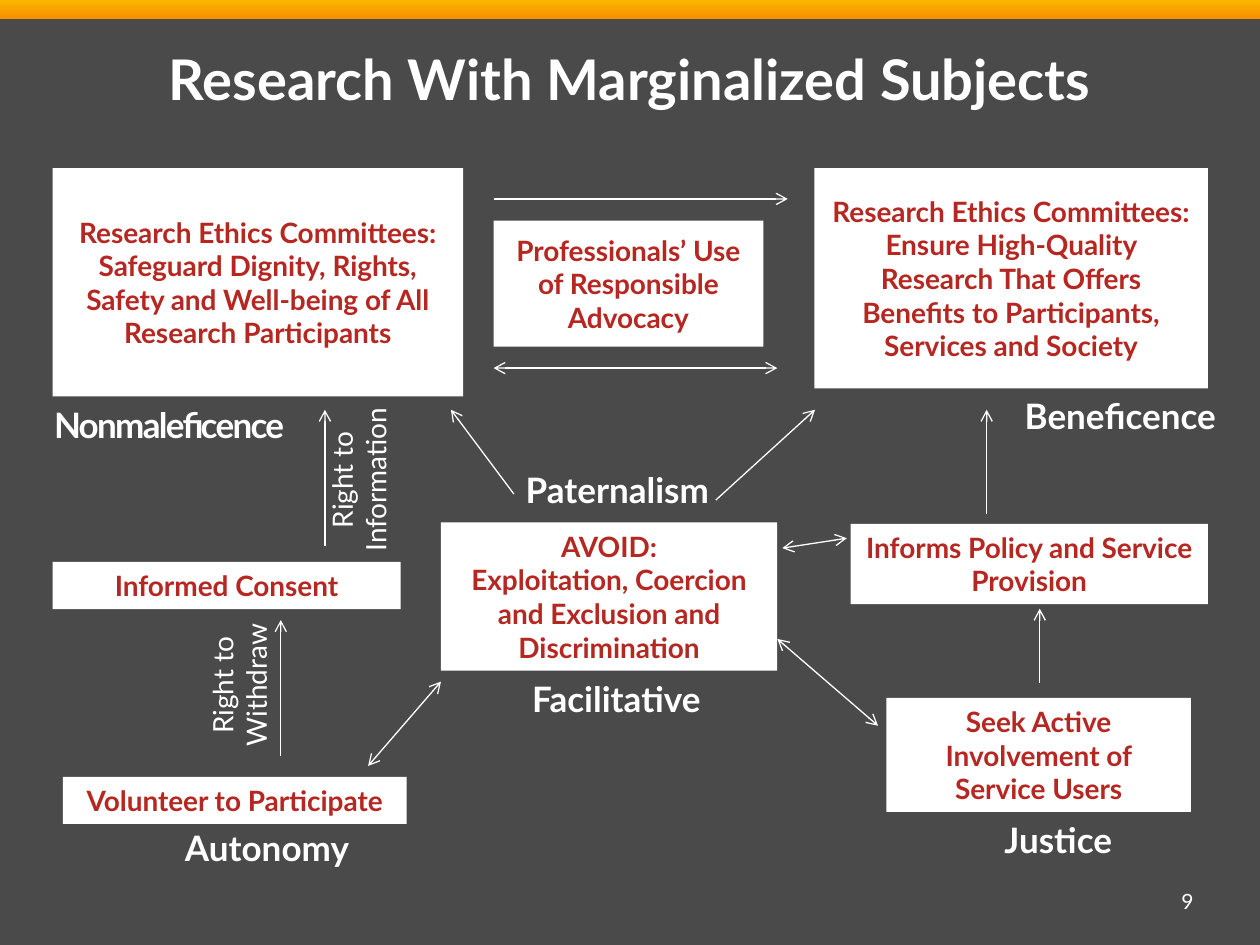
from typing import NamedTuple

from lxml import etree
from pptx import Presentation
from pptx.dml.color import RGBColor
from pptx.enum.shapes import MSO_CONNECTOR, MSO_SHAPE
from pptx.enum.text import MSO_ANCHOR, PP_ALIGN
from pptx.oxml.ns import qn
from pptx.util import Cm, Pt

RECT, STRAIGHT = MSO_SHAPE.RECTANGLE, MSO_CONNECTOR.STRAIGHT
LEFT, CENTER, RIGHT = PP_ALIGN.LEFT, PP_ALIGN.CENTER, PP_ALIGN.RIGHT
TOP, MIDDLE = MSO_ANCHOR.TOP, MSO_ANCHOR.MIDDLE

FONT = "Lato"
WHITE, RED, GREY = "FFFFFF", "B62721", "4A4A4A"
ORANGE, YELLOW = "F78F00", "FAB700"
TITLE_ONLY = 5
LABEL_HEIGHT = 1.11


class Box(NamedTuple):
    text: str
    x: float
    y: float
    w: float
    h: float


class Label(NamedTuple):
    text: str
    x: float
    y: float
    w: float
    align: PP_ALIGN = CENTER
    spacing: float = 0


class Arrow(NamedTuple):
    x1: float
    y1: float
    x2: float
    y2: float
    both: bool = False


BOXES = [
    Box("Research Ethics Committees: Safeguard Dignity, Rights, Safety and "
        "Well-being of All Research Participants", 1.06, 3.39, 8.28, 4.6),
    Box("Professionals’ Use of Responsible Advocacy", 9.95, 4.45, 5.44, 2.54),
    Box("Research Ethics Committees: Ensure High-Quality Research That Offers "
        "Benefits to Participants, Services and Society", 16.42, 3.39, 7.93, 4.44),
    Box("AVOID:\nExploitation, Coercion and Exclusion and Discrimination",
        8.89, 10.53, 6.78, 2.99),
    Box("Informs Policy and Service Provision", 17.15, 10.56, 7.2, 1.62),
    Box("Seek Active Involvement of Service Users", 17.87, 14.07, 6.14, 2.3),
    Box("Volunteer to Participate", 1.27, 15.66, 6.93, 0.95),
    Box("Informed Consent", 1.06, 11.33, 7.02, 0.95),
]
LABELS = [
    Label("Paternalism", 9.98, 9.32, 4.93),
    Label("Facilitative", 10.24, 13.54, 4.37),
    Label("Autonomy", 3.48, 16.54, 4.47, LEFT),
    Label("Justice", 19.33, 16.38, 4.01),
    Label("Nonmaleficence", 0.84, 8, 5.51, LEFT, -1),
    Label("Beneficence", 20.12, 7.82, 4.93),
]
RIGHTS = [
    Box("Right to Withdraw", 2.97, 13, 3.71, 1.62),
    Box("Right to Information", 5.38, 8.86, 3.71, 1.62),
]
ARROWS = [
    Arrow(9.95, 7.42, 15.67, 7.42, both=True),
    Arrow(15.77, 11.05, 17.07, 10.85, both=True),
    Arrow(15.67, 12.88, 17.7, 14.63, both=True),
    Arrow(7.42, 15.44, 8.89, 13.74, both=True),
    Arrow(14.43, 10.08, 16.43, 8.26),
    Arrow(9.95, 4.01, 15.88, 4.01),
    Arrow(5.66, 15.24, 5.66, 12.5),
    Arrow(10.36, 9.96, 9.09, 8.26),
    Arrow(19.89, 10.36, 19.89, 8.26),
    Arrow(20.96, 13.77, 20.96, 12.27),
    Arrow(6.55, 11, 6.55, 8.26),
]


def rgb(color: str) -> RGBColor:
    return RGBColor.from_string(color)


def write(tf, text: str, *, size: float, color: str = WHITE, bold: bool = False,
          align: PP_ALIGN = CENTER, anchor: MSO_ANCHOR = TOP, spacing: float = 0) -> None:
    """Fill a text frame, one paragraph per line of text."""
    tf.word_wrap = True
    tf.vertical_anchor = anchor
    tf.text = text
    for p in tf.paragraphs:
        p.alignment = align
        for r in p.runs:
            r.font.name, r.font.size, r.font.bold = FONT, Pt(size), bold
            r.font.color.rgb = rgb(color)
            if spacing:
                r.font._element.set("spc", str(round(spacing * 100)))


def add_rect(s, x: float, y: float, w: float, h: float):
    sp = s.shapes.add_shape(RECT, Cm(x), Cm(y), Cm(w), Cm(h))
    sp.shadow.inherit = False
    sp.line.fill.background()
    return sp


def add_box(s, box: Box) -> None:
    sp = add_rect(s, box.x, box.y, box.w, box.h)
    sp.fill.solid()
    sp.fill.fore_color.rgb = rgb(WHITE)
    write(sp.text_frame, box.text, size=16, color=RED, bold=True, anchor=MIDDLE)


def add_text(s, box: Box, rotation: float = 0, **fmt) -> None:
    sp = s.shapes.add_textbox(Cm(box.x), Cm(box.y), Cm(box.w), Cm(box.h))
    sp.rotation = rotation
    write(sp.text_frame, box.text, **fmt)


def add_arrow(s, arrow: Arrow) -> None:
    ends = (Cm(v) for v in arrow[:4])
    line = s.shapes.add_connector(STRAIGHT, *ends)
    line.line.color.rgb = rgb(WHITE)
    line.line.width = Pt(0.75)
    ln = line.line._get_or_add_ln()
    for tag in ("a:headEnd", "a:tailEnd") if arrow.both else ("a:tailEnd",):
        etree.SubElement(ln, qn(tag), type="arrow")
    etree.SubElement(line._element.spPr, qn("a:effectLst"))


def main() -> None:
    prs = Presentation()
    prs.slide_width, prs.slide_height = Cm(25.4), Cm(19.05)
    s = prs.slides.add_slide(prs.slide_layouts[TITLE_ONLY])

    # Background and top bar
    s.background.fill.solid()
    s.background.fill.fore_color.rgb = rgb(GREY)
    bar = add_rect(s, 0, 0, 25.4, 0.38)
    bar.fill.gradient()
    bar.fill.gradient_angle = 90
    for stop, color in zip(bar.fill.gradient_stops, (ORANGE, YELLOW)):
        stop.color.rgb = rgb(color)

    # Title
    title = s.shapes.title
    title.left, title.top, title.width, title.height = Cm(1.27), Cm(0.76), Cm(22.86), Cm(2.06)
    write(title.text_frame, "Research With Marginalized Subjects", size=32, bold=True)

    # Diagram
    for box in BOXES:
        add_box(s, box)
    for label in LABELS:
        add_text(s, Box(label.text, label.x, label.y, label.w, LABEL_HEIGHT),
                 size=20, bold=True, align=label.align, spacing=label.spacing)
    for box in RIGHTS:
        add_text(s, box, rotation=270, size=16)
    for arrow in ARROWS:
        add_arrow(s, arrow)

    # Slide number
    add_text(s, Box("9", 22.53, 17.65, 1.78, 1.02), size=12, align=RIGHT, anchor=MIDDLE)

    prs.save("out.pptx")


if __name__ == "__main__":
    main()
